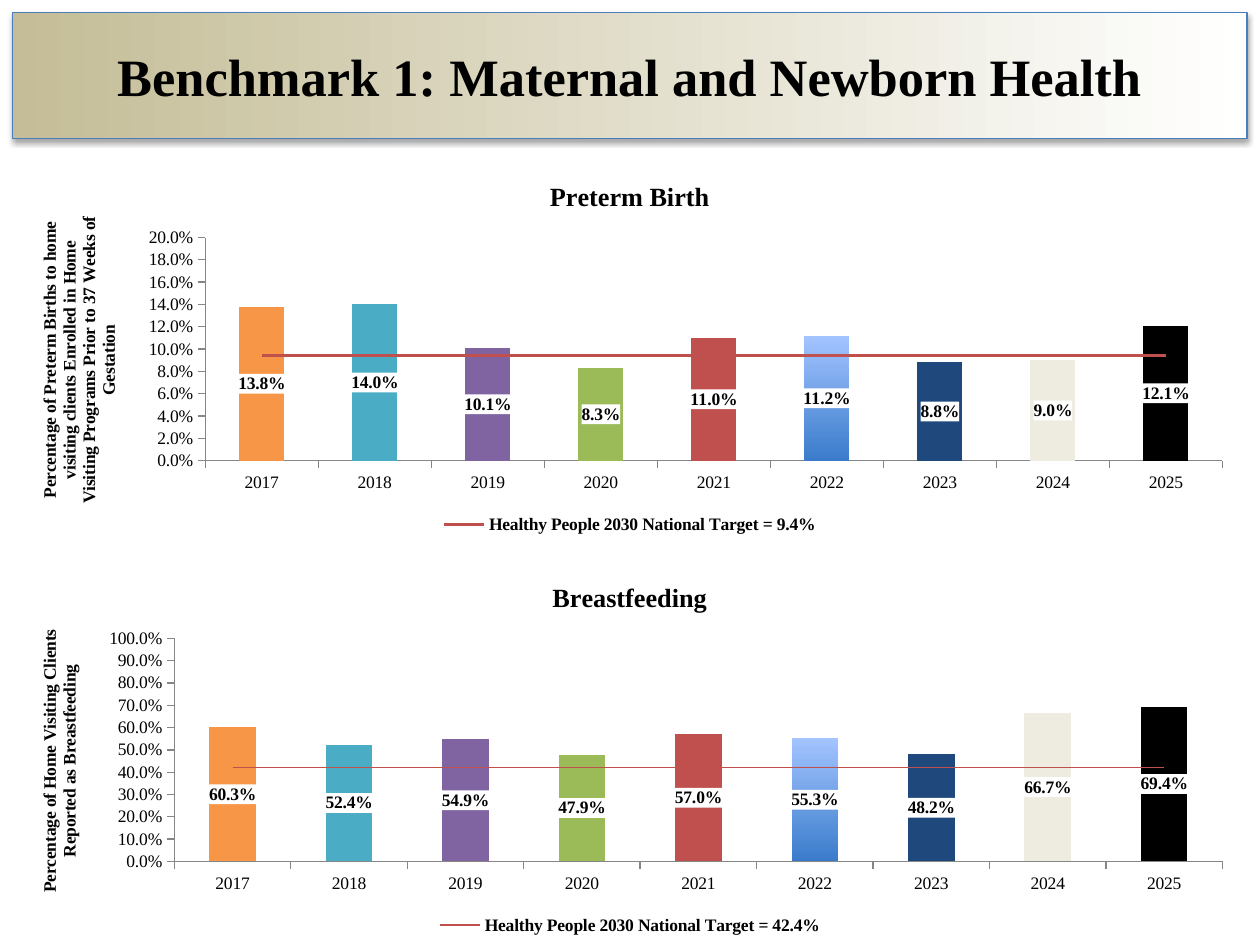
from dataclasses import dataclass

from lxml import etree
from pptx import Presentation
from pptx.chart.chart import Chart
from pptx.chart.data import CategoryChartData
from pptx.dml.color import RGBColor
from pptx.dml.fill import FillFormat
from pptx.enum.chart import (XL_CHART_TYPE, XL_LABEL_POSITION, XL_LEGEND_POSITION,
                             XL_MARKER_STYLE, XL_TICK_MARK)
from pptx.enum.shapes import MSO_SHAPE
from pptx.enum.text import MSO_ANCHOR, PP_ALIGN
from pptx.oxml import parse_xml
from pptx.oxml.ns import nsdecls, qn
from pptx.slide import Slide
from pptx.text.text import Font
from pptx.util import Cm, Pt

COLUMNS = XL_CHART_TYPE.COLUMN_CLUSTERED
CENTER_LABEL = XL_LABEL_POSITION.CENTER
LEGEND_BOTTOM = XL_LEGEND_POSITION.BOTTOM
NO_MARKER = XL_MARKER_STYLE.NONE
TICK_OUTSIDE = XL_TICK_MARK.OUTSIDE
RECTANGLE = MSO_SHAPE.RECTANGLE
MIDDLE = MSO_ANCHOR.MIDDLE
CENTER = PP_ALIGN.CENTER

BLACK = RGBColor(0x00, 0x00, 0x00)
WHITE = RGBColor(0xFF, 0xFF, 0xFF)
TAN = RGBColor(0xC4, 0xBD, 0x97)
BORDER_BLUE = RGBColor(0x4B, 0x7E, 0xBC)
AXIS_GRAY = RGBColor(0x86, 0x86, 0x86)
ORANGE = RGBColor(0xF7, 0x96, 0x46)
TEAL = RGBColor(0x4B, 0xAC, 0xC6)
PURPLE = RGBColor(0x80, 0x64, 0xA2)
GREEN = RGBColor(0x9B, 0xBB, 0x59)
RED = RGBColor(0xC0, 0x50, 0x4D)
LIGHT_BLUE = RGBColor(0xA3, 0xC4, 0xFF)
MID_BLUE = RGBColor(0x3A, 0x7C, 0xCB)
NAVY = RGBColor(0x1F, 0x49, 0x7D)
CREAM = RGBColor(0xEE, 0xEC, 0xE1)

SERIF = "Times New Roman"
PERCENT = "0.0%"
YEARS = [str(year) for year in range(2017, 2026)]
# A pair of colours stands for a gradient from top to bottom.
YEAR_COLORS = [ORANGE, TEAL, PURPLE, GREEN, RED, (LIGHT_BLUE, MID_BLUE), NAVY, CREAM, BLACK]

MARGIN = Cm(0.25)
CONTENT_WIDTH = Cm(24.89)


@dataclass
class Measure:
    title: str
    axis_title: str
    rates: list[float]
    target: float
    target_name: str
    axis_max: float
    axis_step: float
    target_width: float
    top: float


MEASURES = [
    Measure("Preterm Birth",
            "Percentage of Preterm Births to home visiting clients Enrolled in Home "
            "Visiting Programs Prior to 37 Weeks of Gestation",
            [0.138, 0.14, 0.101, 0.083, 0.11, 0.112, 0.088, 0.09, 0.121],
            0.094, "Healthy People 2030 National Target = 9.4%", 0.2, 0.02, 1.5, 3.25),
    Measure("Breastfeeding",
            "Percentage of Home Visiting Clients Reported as Breastfeeding",
            [0.603, 0.524, 0.549, 0.479, 0.57, 0.553, 0.482, 0.667, 0.694],
            0.42, "Healthy People 2030 National Target = 42.4%", 1, 0.1, 0.75, 11.33),
]


def style_font(font: Font, size: float = 10, bold: bool = False) -> None:
    font.name = SERIF
    font.size = Pt(size)
    font.bold = bold
    font.color.rgb = BLACK


def fill_gradient(fill: FillFormat, start: RGBColor, end: RGBColor, angle: float) -> None:
    fill.gradient()
    fill.gradient_angle = angle
    for stop, color in zip(fill.gradient_stops, (start, end)):
        stop.color.rgb = color


def add_banner(page: Slide, title: str) -> None:
    banner = page.shapes.add_shape(RECTANGLE, MARGIN, MARGIN, CONTENT_WIDTH, Cm(2.54))
    fill_gradient(banner.fill, TAN, WHITE, 0)
    banner.line.color.rgb = BORDER_BLUE
    banner.line.width = Pt(0.75)
    banner.element.spPr.append(parse_xml(
        f'<a:effectLst {nsdecls("a")}><a:outerShdw blurRad="39370" dist="22860" '
        'dir="5400000" rotWithShape="0"><a:srgbClr val="000000"><a:alpha val="35000"/>'
        '</a:srgbClr></a:outerShdw></a:effectLst>'))
    frame = banner.text_frame
    frame.text = title
    frame.vertical_anchor = MIDDLE
    para = frame.paragraphs[0]
    para.alignment = CENTER
    style_font(para.runs[0].font, 30, True)


def move_target_to_line(chart: Chart) -> None:
    """Turn the second column series into a line on the same axes."""
    columns = chart.plots[0]
    bar_chart = columns._element
    target = bar_chart.findall(qn("c:ser"))[1]
    for column_setting in target.findall(qn("c:invertIfNegative")):
        target.remove(column_setting)
    line_chart = parse_xml(
        f'<c:lineChart {nsdecls("c")}><c:grouping val="standard"/>'
        '<c:varyColors val="0"/><c:marker val="1"/></c:lineChart>')
    line_chart.insert(2, target)
    for axis_id in bar_chart.findall(qn("c:axId")):
        etree.SubElement(line_chart, qn("c:axId")).set("val", axis_id.get("val"))
    bar_chart.addnext(line_chart)


def style_columns(chart: Chart) -> None:
    plot = chart.plots[0]
    plot.gap_width = 150
    plot.vary_by_categories = False
    series = plot.series[0]
    for index, color in enumerate(YEAR_COLORS):
        fill = series.points[index].format.fill
        if isinstance(color, RGBColor):
            fill.solid()
            fill.fore_color.rgb = color
        else:
            fill_gradient(fill, *color, 270)
    labels = series.data_labels
    labels.show_value = True
    labels.position = CENTER_LABEL
    labels.number_format = PERCENT
    labels.number_format_is_linked = False
    style_font(labels.font, bold=True)
    labels._element.find(qn("c:numFmt")).addnext(parse_xml(
        f'<c:spPr {nsdecls("c", "a")}><a:solidFill><a:srgbClr val="{WHITE}"/>'
        '</a:solidFill></c:spPr>'))


def style_axes(chart: Chart, measure: Measure) -> None:
    rate_axis = chart.value_axis
    for axis in (chart.category_axis, rate_axis):
        axis.has_major_gridlines = False
        axis.major_tick_mark = TICK_OUTSIDE
        axis.format.line.color.rgb = AXIS_GRAY
        style_font(axis.tick_labels.font)
    rate_axis.minimum_scale = 0
    rate_axis.maximum_scale = measure.axis_max
    rate_axis.major_unit = measure.axis_step
    rate_axis.tick_labels.number_format = PERCENT
    rate_axis.tick_labels.number_format_is_linked = False
    frame = rate_axis.axis_title.text_frame
    frame.text = measure.axis_title
    style_font(frame.paragraphs[0].runs[0].font, bold=True)


def add_legend(chart: Chart) -> None:
    """Show only the target line in the legend."""
    chart.has_legend = True
    legend = chart.legend
    legend.position = LEGEND_BOTTOM
    legend.include_in_layout = False
    style_font(legend.font, bold=True)
    legend._element.find(qn("c:legendPos")).addnext(parse_xml(
        f'<c:legendEntry {nsdecls("c")}><c:idx val="0"/><c:delete val="1"/></c:legendEntry>'))


def add_measure_chart(page: Slide, measure: Measure) -> None:
    data = CategoryChartData(number_format=PERCENT)
    data.categories = YEARS
    data.add_series("Series 1", measure.rates)
    data.add_series(measure.target_name, [measure.target] * len(YEARS))
    chart = page.shapes.add_chart(
        COLUMNS, MARGIN, Cm(measure.top), CONTENT_WIDTH, Cm(7.62), data).chart
    style_font(chart.font)
    chart.has_title = True
    frame = chart.chart_title.text_frame
    frame.text = measure.title
    style_font(frame.paragraphs[0].runs[0].font, 15, True)
    chart.chart_title.include_in_layout = False
    move_target_to_line(chart)
    style_columns(chart)
    target = chart.plots[1].series[0]
    target.smooth = False
    target.marker.style = NO_MARKER
    target.format.line.color.rgb = RED
    target.format.line.width = Pt(measure.target_width)
    style_axes(chart, measure)
    add_legend(chart)


def main() -> None:
    deck = Presentation()
    deck.slide_width, deck.slide_height = Cm(25.4), Cm(19.05)
    page = deck.slides.add_slide(deck.slide_layouts[6])
    add_banner(page, "Benchmark 1: Maternal and Newborn Health")
    for measure in MEASURES:
        add_measure_chart(page, measure)
    deck.save("out.pptx")


if __name__ == "__main__":
    main()
